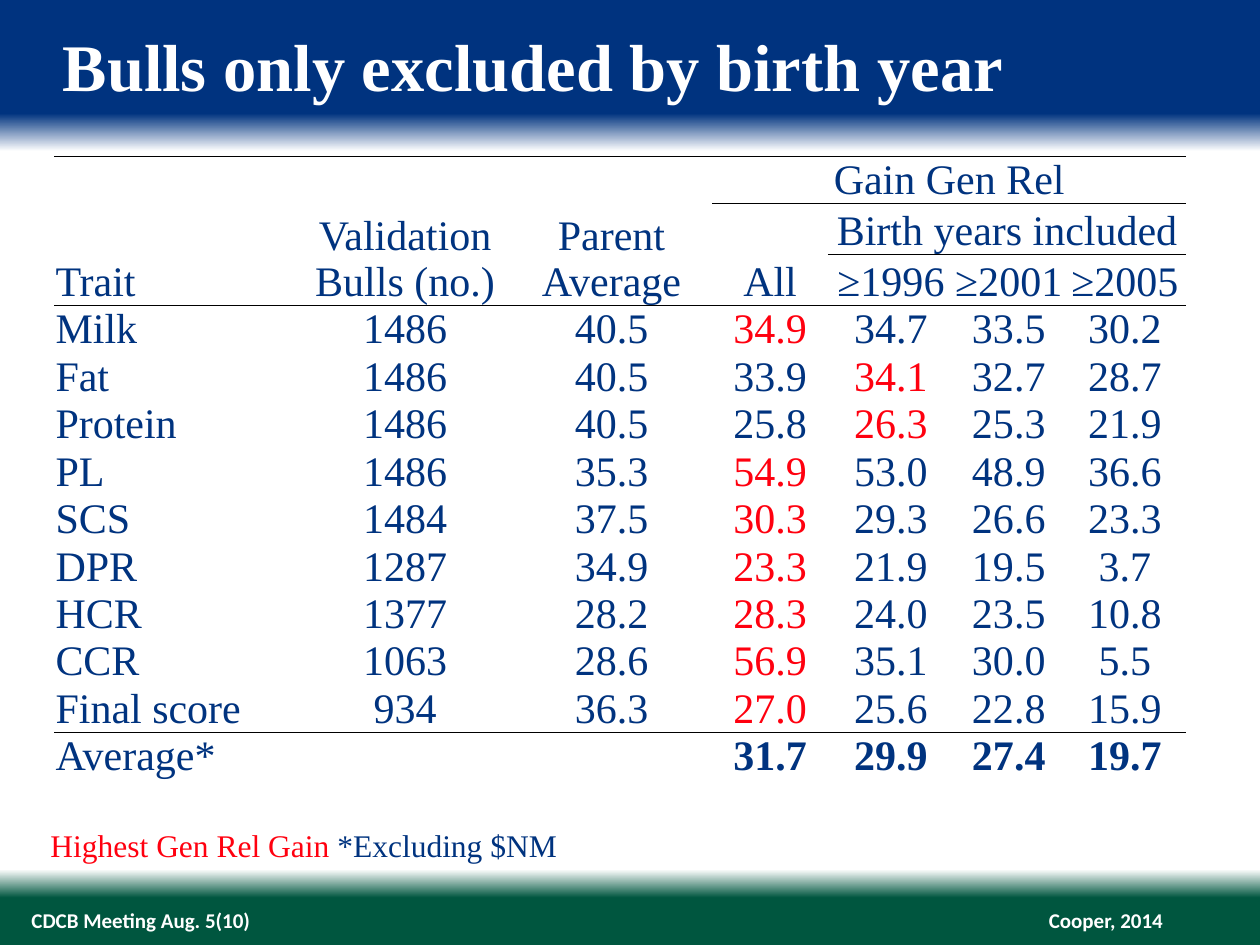
import pptx
import pptx.util
import pptx.dml.color
import pptx.enum.text
import pptx.oxml.ns
import lxml.etree

Pt = pptx.util.Pt
RGB = pptx.dml.color.RGBColor
ALIGN = pptx.enum.text.PP_ALIGN
ANCHOR = pptx.enum.text.MSO_ANCHOR
FIT = pptx.enum.text.MSO_AUTO_SIZE
qn = pptx.oxml.ns.qn

NAVY = RGB(0x00, 0x33, 0x7F)
GREEN = RGB(0x00, 0x56, 0x3F)
RED = RGB(0xFF, 0x00, 0x0F)
WHITE = RGB(0xFF, 0xFF, 0xFF)
BLACK = RGB(0x00, 0x00, 0x00)

SERIF = "Times New Roman"
HEAD = {"name": SERIF, "size": Pt(38), "bold": True, "color": WHITE}
BODY = {"name": SERIF, "size": Pt(24), "bold": False, "color": NAVY}
NOTE = {"name": SERIF, "size": Pt(18), "bold": False, "color": NAVY}
FOOT = {"name": "Calibri", "size": Pt(12), "bold": True, "color": WHITE}
FLUSH = dict.fromkeys(
    ("margin_left", "margin_top", "margin_right", "margin_bottom"), Pt(0))

STOPS = [(0, NAVY), (12, NAVY), (16, WHITE), (92, WHITE), (95, GREEN), (100, GREEN)]
WIDTHS = [140, 121, 115, 66.2, 72, 62.6, 70.2]
TOPS = [
    ["", "", "", "Gain Gen Rel", "", "", ""],
    ["Trait", "Validation Bulls (no.)", "Parent Average", "All",
     "Birth years included", "", ""],
    ["", "", "", "", "≥1996", "≥2001", "≥2005"],
]
DATA = [
    ["Milk", "1486", "40.5", "34.9", "34.7", "33.5", "30.2"],
    ["Fat", "1486", "40.5", "33.9", "34.1", "32.7", "28.7"],
    ["Protein", "1486", "40.5", "25.8", "26.3", "25.3", "21.9"],
    ["PL", "1486", "35.3", "54.9", "53.0", "48.9", "36.6"],
    ["SCS", "1484", "37.5", "30.3", "29.3", "26.6", "23.3"],
    ["DPR", "1287", "34.9", "23.3", "21.9", "19.5", "3.7"],
    ["HCR", "1377", "28.2", "28.3", "24.0", "23.5", "10.8"],
    ["CCR", "1063", "28.6", "56.9", "35.1", "30.0", "5.5"],
    ["Final score", "934", "36.3", "27.0", "25.6", "22.8", "15.9"],
]
MEANS = ["Average*", "", "", "31.7", "29.9", "27.4", "19.7"]
GRID = TOPS + DATA + [MEANS]
SPANS = [((0, 3), (0, 6)), ((1, 4), (1, 6))] + [((1, c), (2, c)) for c in range(4)]
RULES = {0: (0, 0.5), 1: (3, 0.5), 2: (4, 1), 3: (0, 0.5), 12: (0, 1)}
PLAIN = "{2D5ABB26-0587-4C30-8999-92F81FD0307C}"


def apply(item, style):
    """Set each attribute of an item from a dict of values."""
    for key, value in style.items():
        if key == "color":
            item.color.rgb = value
        else:
            setattr(item, key, value)


def write(para, text, style, **more):
    """Add a run of styled text to a paragraph."""
    run = para.add_run()
    run.text = text
    apply(run.font, {**style, **more})


def add_color(node, color):
    """Add a colour value to an element."""
    lxml.etree.SubElement(node, qn("a:srgbClr"), val=str(color))


def paint(slide):
    """Fill the background with its banded gradient."""
    fill = slide.background.fill
    fill.gradient()
    fill.gradient_angle = 270
    stops = next(slide._element.iter(qn("a:gsLst")))
    for stop in list(stops):
        stops.remove(stop)
    for place, color in STOPS:
        add_color(lxml.etree.SubElement(stops, qn("a:gs"), pos=str(place * 1000)), color)


def add_title(slide, text):
    """Place and format the title."""
    title = slide.shapes.title
    apply(title, {"left": Pt(35.8), "top": Pt(14.4), "width": Pt(648), "height": Pt(46)})
    frame = title.text_frame
    apply(frame, {**FLUSH, "word_wrap": True, "vertical_anchor": ANCHOR.TOP,
                  "auto_size": FIT.SHAPE_TO_FIT_TEXT})
    para = frame.paragraphs[0]
    para.alignment = ALIGN.LEFT
    write(para, text, HEAD)


def add_text(slide, box, runs, style, align=ALIGN.LEFT, **more):
    """Add a text box with one paragraph of coloured runs."""
    frame = slide.shapes.add_textbox(*map(Pt, box)).text_frame
    apply(frame, {"word_wrap": True, "auto_size": FIT.SHAPE_TO_FIT_TEXT, **more})
    para = frame.paragraphs[0]
    para.alignment = align
    for text, color in runs:
        write(para, text, style, color=color)


def add_rules(cell, row, col):
    """Draw or clear the rules above and below a cell."""
    low = row + (2 if row == 1 and col < 4 else 1)
    props = cell._tc.get_or_add_tcPr()
    for tag, edge in (("a:lnT", row), ("a:lnB", low)):
        first, width = RULES.get(edge, (len(WIDTHS), 1))
        line = lxml.etree.SubElement(props, qn(tag), w=str(Pt(width)))
        if col >= first:
            add_color(lxml.etree.SubElement(line, qn("a:solidFill")), BLACK)
        else:
            lxml.etree.SubElement(line, qn("a:noFill"))


def fill_cell(cell, row, col):
    """Format one cell and write its value."""
    add_rules(cell, row, col)
    cell.fill.background()
    side = Pt(0.72)
    apply(cell, {"margin_left": side, "margin_top": side, "margin_right": side,
                 "margin_bottom": 0,
                 "vertical_anchor": ANCHOR.BOTTOM if row < len(TOPS) else ANCHOR.MIDDLE})
    para = cell.text_frame.paragraphs[0]
    apply(para, {"alignment": ALIGN.CENTER if col else ALIGN.LEFT,
                 "line_spacing": Pt(26.4)})
    text = GRID[row][col]
    if not text:
        return
    gains = GRID[row][3:]
    best = GRID[row] in DATA and col > 2 and text == max(gains, key=float)
    write(para, text, BODY, color=RED if best else NAVY,
          bold=GRID[row] is MEANS and col > 2)


def add_grid(slide):
    """Add the table of gains by trait."""
    frame = slide.shapes.add_table(len(GRID), len(WIDTHS), Pt(31), Pt(89.3),
                                   Pt(sum(WIDTHS)), Pt(356))
    table = frame.table
    apply(table, {"first_row": False, "horz_banding": False})
    next(table._tbl.iter(qn("a:tableStyleId"))).text = PLAIN
    for col, width in zip(table.columns, WIDTHS):
        col.width = Pt(width)
    for row, line in enumerate(table.rows):
        line.height = Pt(29 if row in (1, 2) else 27.1)
        for col, cell in enumerate(line.cells):
            fill_cell(cell, row, col)
    for start, end in SPANS:
        table.cell(*start).merge(table.cell(*end))


def main():
    """Build the slide and save it."""
    deck = pptx.Presentation()
    apply(deck, {"slide_width": Pt(720), "slide_height": Pt(540)})
    slide = deck.slides.add_slide(deck.slide_layouts[5])
    paint(slide)
    foot = {**FLUSH, "vertical_anchor": ANCHOR.MIDDLE}
    add_text(slide, (597.6, 518.4, 67, 14.4), [("Cooper, 2014", WHITE)], FOOT,
             ALIGN.RIGHT, **{**foot, "word_wrap": False})
    add_text(slide, (18, 518.4, 376, 14.4), [("CDCB Meeting Aug. 5(10)", WHITE)],
             FOOT, **foot)
    add_title(slide, "Bulls only excluded by birth year")
    add_grid(slide)
    add_text(slide, (21.8, 468.7, 310, 29),
             [("Highest Gen Rel Gain ", RED), ("*Excluding $NM", NAVY)], NOTE)
    deck.save("out.pptx")


if __name__ == "__main__":
    main()
